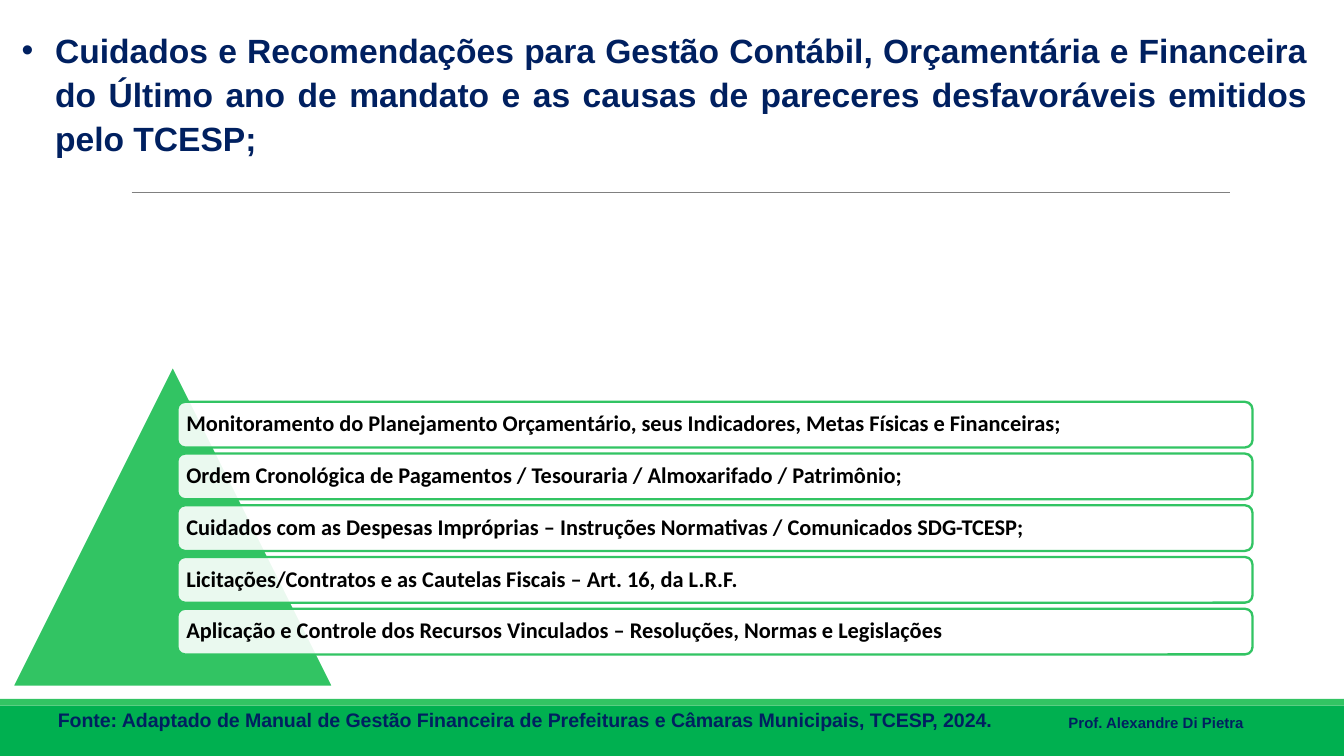
from lxml import etree
from pptx import Presentation
from pptx.dml.color import RGBColor
from pptx.enum import shapes as sh, text as tx
from pptx.oxml import ns
from pptx.util import Inches, Pt

COLORS = {"green": "00B050", "light": "32C463", "navy": "002060",
          "gray": "808080", "white": "FFFFFF", "black": "000000"}
TITLE = ("Cuidados e Recomendações para Gestão Contábil, Orçamentária e "
         "Financeira do Último ano de mandato e as causas de pareceres "
         "desfavoráveis emitidos pelo TCESP;")
TOPICS = [
    "Monitoramento do Planejamento Orçamentário, seus Indicadores, Metas Físicas e Financeiras;",
    "Ordem Cronológica de Pagamentos / Tesouraria / Almoxarifado / Patrimônio;",
    "Cuidados com as Despesas Impróprias – Instruções Normativas / Comunicados SDG-TCESP;",
    "Licitações/Contratos e as Cautelas Fiscais – Art. 16, da L.R.F.",
    "Aplicação e Controle dos Recursos Vinculados – Resoluções, Normas e Legislações",
]
SOURCE = ("Fonte: Adaptado de Manual de Gestão Financeira de Prefeituras e "
          "Câmaras Municipais, TCESP, 2024.")
AUTHOR = "Prof. Alexandre Di Pietra"
WIDE = 10
HIGH = WIDE * 9 / 16


def color(name):
    return RGBColor.from_string(COLORS[name])


def write(shape, words, size, face="Arial", tint="navy", pad=(0.07, 0.04)):
    """Fill the shape with one bold paragraph and return it."""
    frame = shape.text_frame
    frame.word_wrap = True
    frame.auto_size = tx.MSO_AUTO_SIZE.NONE
    frame.margin_left = frame.margin_right = Inches(pad[0])
    frame.margin_top = frame.margin_bottom = Inches(pad[1])
    para = frame.paragraphs[0]
    para.text = words
    para.font.size = Pt(size)
    para.font.name = face
    para.font.bold = True
    para.font.color.rgb = color(tint)
    return para


def draw(slide, kind, box, fill, line=None):
    """Add a preset shape with a flat fill and an optional outline."""
    shape = slide.shapes.add_shape(kind, *map(Inches, box))
    shape.shadow.inherit = False
    shape.fill.solid()
    shape.fill.fore_color.rgb = color(fill)
    if line:
        shape.line.color.rgb = color(line)
        shape.line.width = Pt(1.25)
    else:
        shape.line.fill.background()
    return shape


def add_title(slide, box):
    title = slide.shapes.title
    title.left, title.top, title.width, title.height = map(Inches, box)
    para = write(title, TITLE, 18)
    title.text_frame.vertical_anchor = tx.MSO_ANCHOR.TOP
    para.alignment = tx.PP_ALIGN.JUSTIFY
    para.line_spacing = 1.1
    para.space_before = Pt(10)
    # Hanging bullet, placed ahead of the font settings
    props = para._p.get_or_add_pPr()
    props.set("marL", str(Inches(0.25)))
    props.set("indent", str(Inches(-0.25)))
    last = props.find(ns.qn("a:defRPr"))
    for tag, key, value in (("a:buFont", "typeface", "Arial"),
                            ("a:buChar", "char", "•")):
        mark = etree.Element(ns.qn(tag))
        mark.set(key, value)
        last.addprevious(mark)


def add_rule(slide, left, top, width):
    rule = slide.shapes.add_connector(
        sh.MSO_CONNECTOR.STRAIGHT, Inches(left), Inches(top),
        Inches(left + width), Inches(top))
    rule.line.color.rgb = color("gray")
    rule.line.width = Pt(0.5)
    etree.SubElement(rule._element.spPr, ns.qn("a:effectLst"))


def add_topics(slide, box):
    left, top, width, height = box
    # Triangle as tall as the region
    draw(slide, sh.MSO_SHAPE.ISOSCELES_TRIANGLE,
         (left, top, height, height), "light", "white")
    # Translucent cards at an even pitch
    inset, pitch = 1.23, 0.385
    for i, words in enumerate(TOPICS):
        card = draw(slide, sh.MSO_SHAPE.ROUNDED_RECTANGLE,
                    (left + inset, top + 0.27 + i * pitch,
                     width - inset, 0.34), "white", "light")
        tone = card._element.spPr.find(
            f"{ns.qn('a:solidFill')}/{ns.qn('a:srgbClr')}")
        etree.SubElement(tone, ns.qn("a:alpha")).set("val", "90000")
        para = write(card, words, 12, "Calibri", "black", (0.05, 0.05))
        card.text_frame.vertical_anchor = tx.MSO_ANCHOR.MIDDLE
        para.alignment = tx.PP_ALIGN.LEFT
        para.line_spacing = 0.9


def add_footer(slide, box):
    left, top, width, height = box
    strip = 0.05
    draw(slide, sh.MSO_SHAPE.RECTANGLE,
         (left, top + strip, width, height - strip), "green")
    draw(slide, sh.MSO_SHAPE.RECTANGLE, (left, top, width, strip), "light")
    for words, size, x, y, w, h in (
            (AUTHOR, 8, 7.88, 0.07, 2.12, 0.21),
            (SOURCE, 10.5, 0.36, 0.03, 7.22, 0.25)):
        note = slide.shapes.add_textbox(
            *map(Inches, (left + x, top + y, w, h)))
        write(note, words, size)


def main():
    deck = Presentation()
    deck.slide_width, deck.slide_height = Inches(WIDE), Inches(HIGH)
    slide = deck.slides.add_slide(deck.slide_layouts[5])
    add_footer(slide, (0, 5.2, WIDE, HIGH - 5.2))
    add_rule(slide, 0.98, 1.43, 8.17)
    add_title(slide, (0.09, 0.15, 9.71, 2.51))
    add_topics(slide, (0.09, 2.72, 9.23, 2.39))
    deck.save("out.pptx")


if __name__ == "__main__":
    main()
